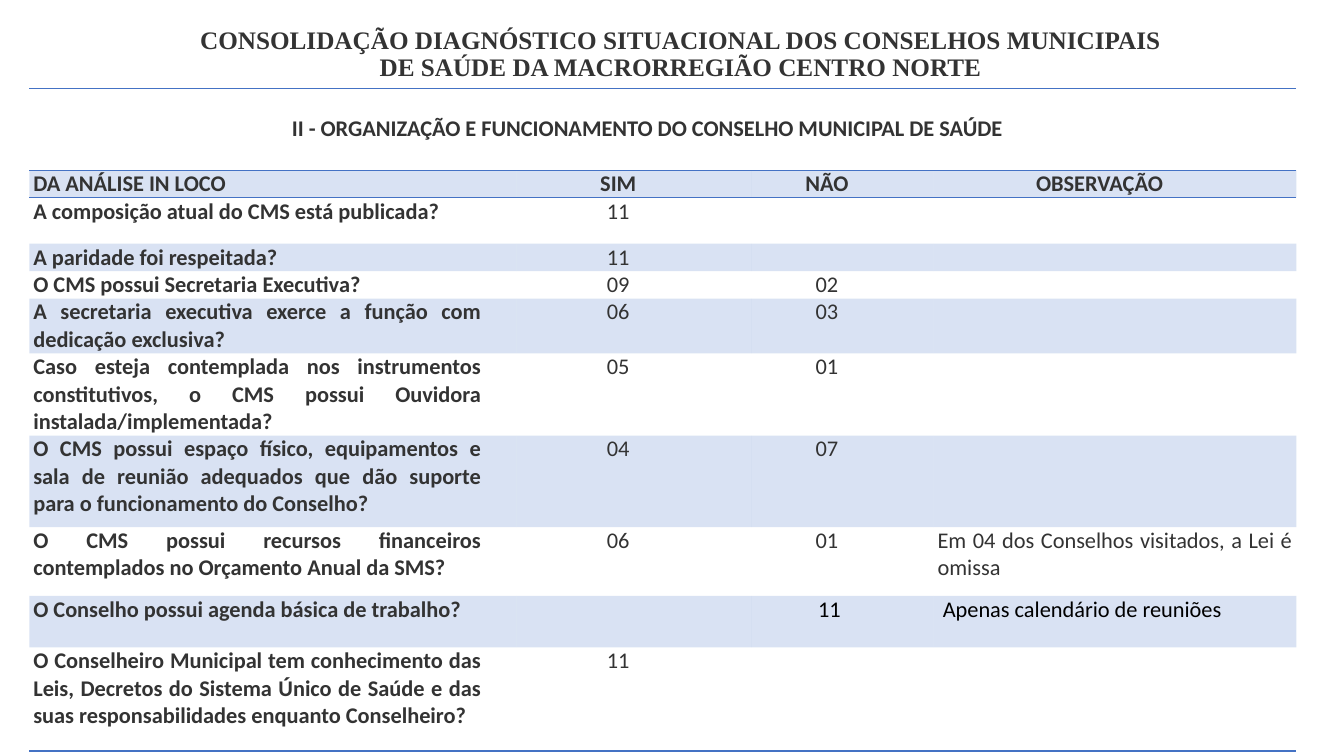
from lxml import etree
from pptx import Presentation
from pptx.dml.color import RGBColor
from pptx.enum.text import MSO_ANCHOR, MSO_AUTO_SIZE, PP_ALIGN
from pptx.oxml.ns import qn
from pptx.util import Cm, Pt

CENTER, JUSTIFY = PP_ALIGN.CENTER, PP_ALIGN.JUSTIFY
MIDDLE = MSO_ANCHOR.MIDDLE
NO_AUTOFIT = MSO_AUTO_SIZE.NONE

# Content
TITLE = ("CONSOLIDAÇÃO DIAGNÓSTICO SITUACIONAL DOS CONSELHOS MUNICIPAIS "
         "DE SAÚDE DA MACRORREGIÃO CENTRO NORTE")
SECTION = "II - ORGANIZAÇÃO E FUNCIONAMENTO DO CONSELHO MUNICIPAL DE SAÚDE"
HEADINGS = ("DA ANÁLISE IN LOCO", "SIM", "NÃO", "OBSERVAÇÃO")
ANSWERS = [
    ("A composição atual do CMS está publicada?", "11", "", ""),
    ("A paridade foi respeitada?", "11", "", ""),
    ("O CMS possui Secretaria Executiva?", "09", "02", ""),
    ("A secretaria executiva exerce a função com dedicação exclusiva?",
     "06", "03", ""),
    ("Caso esteja contemplada nos instrumentos constitutivos, o CMS possui "
     "Ouvidora instalada/implementada?", "05", "01", ""),
    ("O CMS possui espaço físico, equipamentos e sala de reunião adequados "
     "que dão suporte para o funcionamento do Conselho?", "04", "07", ""),
    ("O CMS possui recursos financeiros contemplados no Orçamento Anual da "
     "SMS?", "06", "01", "Em 04 dos Conselhos visitados, a Lei é omissa"),
    ("O Conselho possui agenda básica de trabalho?", "", "11",
     "Apenas calendário de reuniões"),
    ("O Conselheiro Municipal tem conhecimento das Leis, Decretos do Sistema "
     "Único de Saúde e das suas responsabilidades enquanto Conselheiro?",
     "11", "", ""),
]
ROWS = [(SECTION, "", "", ""), HEADINGS, *ANSWERS]
AGENDA_ROW = 9
LAST_ROW = len(ROWS) - 1

# Look
COLORS = {"text": "333333", "agenda": "000000", "accent": "4472C4"}
COLUMN_WIDTHS = (12.27, 5.92, 4.6, 9.14)
ROW_HEIGHTS = (2.07, 0.69, 1.16, 0.69, 0.69, 1.38, 2.07, 2.31, 1.73, 1.3, 2.61)
PLAIN_STYLE = "{2D5ABB26-0587-4C30-8999-92F81FD0307C}"
TEXT_SIZE = 16


def format_font(font, name, size, color, bold):
    font.name, font.size, font.bold = name, Pt(size), bold
    font.color.rgb = RGBColor.from_string(COLORS[color])


def add_border(cell, side, position):
    line = etree.Element(qn("a:" + side), w=str(Pt(1)))
    fill = etree.SubElement(line, qn("a:solidFill"))
    etree.SubElement(fill, qn("a:srgbClr"), val=COLORS["accent"])
    cell._tc.get_or_add_tcPr().insert(position, line)


def tint(cell):
    cell.fill.solid()
    cell.fill.fore_color.rgb = RGBColor.from_string(COLORS["accent"])
    color = cell._tc.tcPr.find(".//" + qn("a:srgbClr"))
    etree.SubElement(color, qn("a:alpha"), val="20000")


def fill_cell(cell, text, row, column):
    cell.margin_left = cell.margin_right = Cm(0.1)
    cell.margin_top = cell.margin_bottom = 0
    para = cell.text_frame.paragraphs[0]
    para.text = text
    is_heading = row < 2
    is_note = column == 3 and not is_heading
    starts_left = is_note or (column == 0 and row > 0)
    para.alignment = JUSTIFY if starts_left else CENTER
    properties = para._p.get_or_add_pPr()
    if not is_note:
        properties.set("marR", str(Cm(0.78)))
    color = "text"
    if row == AGENDA_ROW and column > 1:
        color = "agenda"
        properties.set("marL", str(Cm(0.13)))
    for span in para.runs:
        format_font(span.font, "Calibri", TEXT_SIZE, color,
                    is_heading or column == 0)
    if not text:
        # An empty cell keeps the row's text size
        end = etree.SubElement(para._p, qn("a:endParaRPr"))
        end.set("sz", str(TEXT_SIZE * 100))


deck = Presentation()
deck.slide_width, deck.slide_height = Cm(33.87), Cm(19.05)
page = deck.slides.add_slide(deck.slide_layouts[5])

# Title
title = page.shapes.title
title.left, title.top, title.width, title.height = (
    Cm(4.5), Cm(0.4), Cm(25.3), Cm(1.95))
frame = title.text_frame
frame.text = TITLE
frame.word_wrap = True
frame.auto_size = NO_AUTOFIT
frame.vertical_anchor = MIDDLE
heading = frame.paragraphs[0]
heading.alignment, heading.line_spacing = CENTER, 0.9
format_font(heading.runs[0].font, "Times New Roman", 18, "text", True)

# Table
table_frame = page.shapes.add_table(
    len(ROWS), len(COLUMN_WIDTHS), Cm(0.74), Cm(2.22),
    Cm(sum(COLUMN_WIDTHS)), Cm(sum(ROW_HEIGHTS)))
table = table_frame.table
table.first_row = table.horz_banding = False
table._tbl.tblPr.find(qn("a:tableStyleId")).text = PLAIN_STYLE
for column, width in zip(table.columns, COLUMN_WIDTHS):
    column.width = Cm(width)
for row, height in zip(table.rows, ROW_HEIGHTS):
    row.height = Cm(height)

for row, texts in enumerate(ROWS):
    for column, text in enumerate(texts):
        cell = table.cell(row, column)
        fill_cell(cell, text, row, column)
        if row % 2:
            tint(cell)
        else:
            cell.fill.background()
        if row == 0:
            add_border(cell, "lnT", 0)
            add_border(cell, "lnB", 1)
        elif row == 1:
            add_border(cell, "lnT", 0)
        elif row == LAST_ROW:
            add_border(cell, "lnB", 0)

# Section heading across the table
table.cell(0, 0).merge(table.cell(0, 3))
table.cell(0, 0).vertical_anchor = MIDDLE

deck.save("out.pptx")
